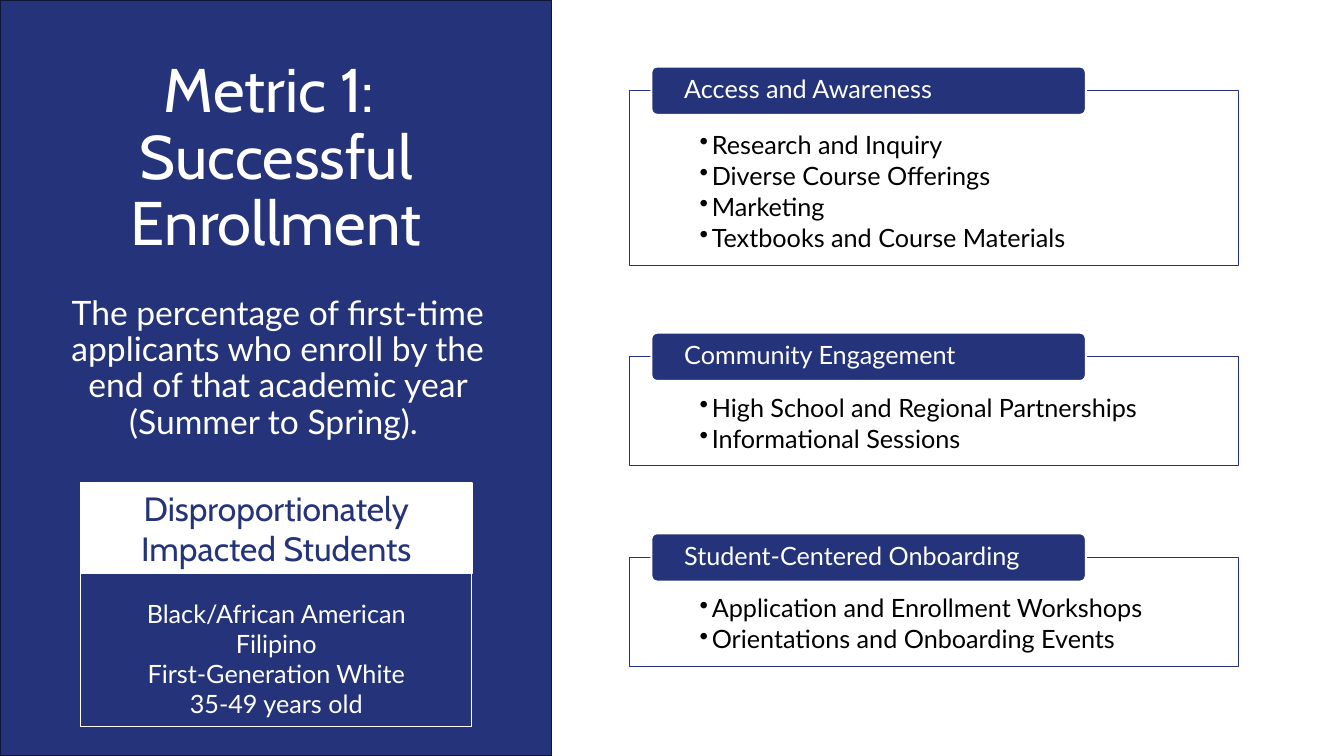
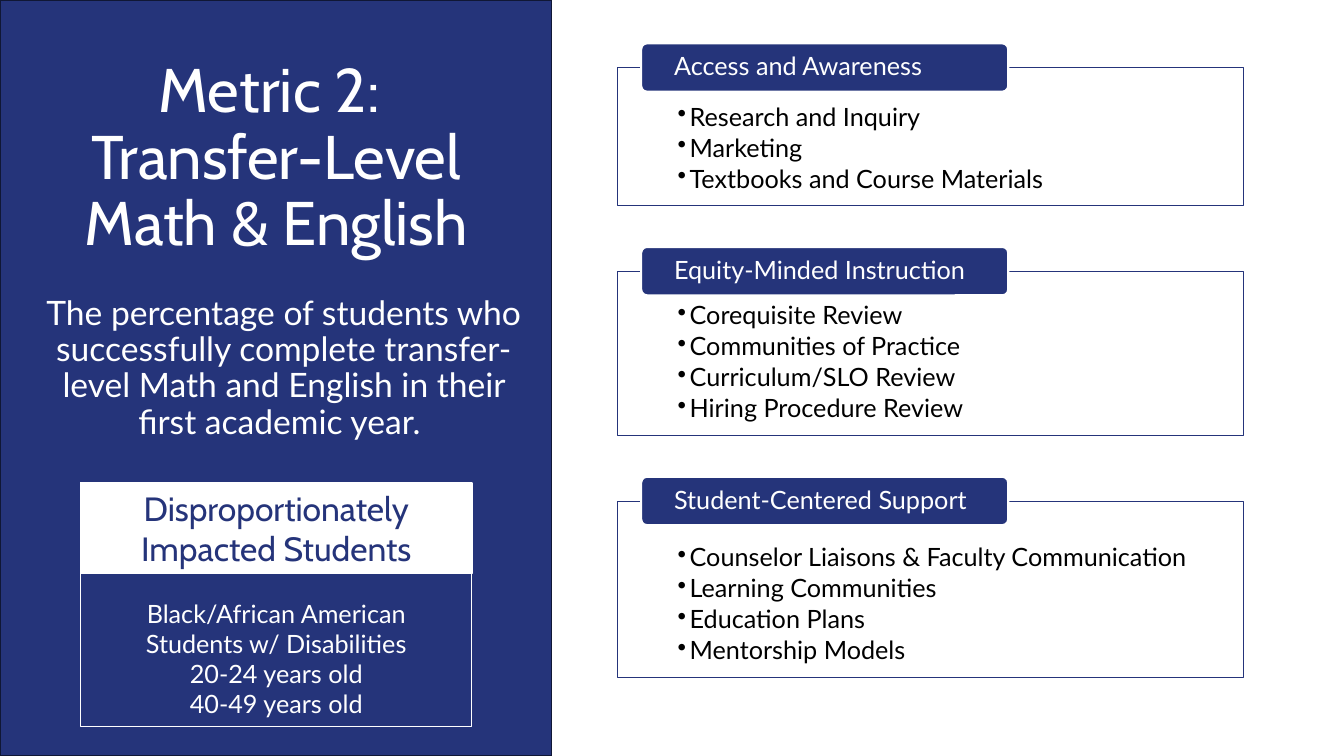
from lxml import etree
from pptx import Presentation
from pptx.dml.color import RGBColor
from pptx.enum.shapes import MSO_SHAPE
from pptx.enum.text import MSO_ANCHOR, MSO_AUTO_SIZE, PP_ALIGN
from pptx.oxml.ns import qn
from pptx.util import Inches, Pt

RECT, ROUNDED = MSO_SHAPE.RECTANGLE, MSO_SHAPE.ROUNDED_RECTANGLE
TOP, MIDDLE, BOTTOM = MSO_ANCHOR.TOP, MSO_ANCHOR.MIDDLE, MSO_ANCHOR.BOTTOM
LEFT, CENTER = PP_ALIGN.LEFT, PP_ALIGN.CENTER
NO_FIT = MSO_AUTO_SIZE.NONE

COLORS = {"navy": "25347A", "edge": "101735", "white": "FFFFFF", "black": "000000"}
HEAD_FONT, BODY_FONT = "Cabin", "Lato"
PANEL_W, SLIDE_W, SLIDE_H = 5.47, 13.33, 7.5
TAB_H = 0.48

# Cards: heading, box height, bullet items
METRICS = [
    {
        "title": "Metric 1: \vSuccessful Enrollment",
        "body": "The percentage of first-time applicants who enroll by the end "
                "of that academic year (Summer to Spring). ",
        "body_box": (0.43, 2.89, 4.65, 1.64),
        "groups": ["Black/African American", "Filipino",
                   "First-Generation White", "35-49 years old"],
        "column": {"left": 6.24, "top": 0.9, "width": 6.04, "gap": 0.91,
                   "tab_dx": 0.22, "tab_w": 4.31, "inset": 0.7},
        "cards": [
            ("Access and Awareness", 1.73,
             ["Research and Inquiry", "Diverse Course Offerings", "Marketing",
              "Textbooks and Course Materials"]),
            ("Community Engagement", 1.08,
             ["High School and Regional Partnerships", "Informational Sessions"]),
            ("Student-Centered Onboarding", 1.08,
             ["Application and Enrollment Workshops",
              "Orientations and Onboarding Events"]),
        ],
    },
    {
        "title": "Metric 2: \vTransfer-Level Math & English",
        "body": "The percentage of students who successfully complete "
                "transfer-level Math and English in their first academic year. ",
        "body_box": (0.36, 2.89, 4.91, 1.64),
        "groups": ["Black/African American", "Students w/ Disabilities",
                   "20-24 years old", "40-49 years old"],
        "column": {"left": 6.12, "top": 0.67, "width": 6.21, "gap": 0.65,
                   "tab_dx": 0.24, "tab_w": 3.64, "inset": 0.6},
        "cards": [
            ("Access and Awareness", 1.37,
             ["Research and Inquiry", "Marketing",
              "Textbooks and Course Materials"]),
            ("Equity-Minded Instruction", 1.63,
             ["Corequisite Review", "Communities of Practice",
              "Curriculum/SLO Review", "Hiring Procedure Review"]),
            ("Student-Centered Support", 1.75,
             ["Counselor Liaisons & Faculty Communication",
              "Learning Communities", "Education Plans", "Mentorship Models"]),
        ],
    },
]


def rgb(name):
    return RGBColor.from_string(COLORS[name])


def add_box(s, kind, box, fill, line, weight):
    sp = s.shapes.add_shape(kind, *map(Inches, box))
    sp.shadow.inherit = False
    if fill:
        sp.fill.solid()
        sp.fill.fore_color.rgb = rgb(fill)
    else:
        sp.fill.background()
    sp.line.color.rgb = rgb(line)
    sp.line.width = Pt(weight)
    return sp


def set_frame(tf, anchor, insets=(0.1, 0.05, 0.1, 0.05)):
    tf.word_wrap = True
    tf.auto_size = NO_FIT
    tf.vertical_anchor = anchor
    tf.margin_left, tf.margin_top, tf.margin_right, tf.margin_bottom = map(Inches, insets)


def style(p, font, size, color, align=LEFT, spacing=1.0, after=0):
    p.alignment = align
    p.line_spacing = spacing
    p.space_before, p.space_after = Pt(0), Pt(after)
    for r in p.runs:
        r.font.name, r.font.size = font, Pt(size)
        r.font.color.rgb = rgb(color)


def set_bullet(p, char=None, indent=0.0):
    """Hang the paragraph on a bullet, or remove the inherited one."""
    pPr = p._p.get_or_add_pPr()
    pPr.set("marL", str(Inches(indent)))
    pPr.set("indent", str(-Inches(indent)))
    bu = etree.SubElement(pPr, qn("a:buChar" if char else "a:buNone"))
    if char:
        bu.set("char", char)


def fill_placeholder(ph, box, text, anchor, font, size):
    ph.left, ph.top, ph.width, ph.height = map(Inches, box)
    tf = ph.text_frame
    tf.text = text
    set_frame(tf, anchor)
    p = tf.paragraphs[0]
    set_bullet(p)
    style(p, font, size, "white", CENTER, 0.9)


def add_impact_box(s, box, groups):
    left, top, width, _ = box
    add_box(s, RECT, (left, top, width, 0.9), "white", "white", 1)
    frame = add_box(s, RECT, box, None, "white", 0.75)
    tf = frame.text_frame
    tf.text = "\n".join(["Disproportionately Impacted Students"] + groups)
    set_frame(tf, TOP)
    heading, *names = tf.paragraphs
    style(heading, HEAD_FONT, 24, "navy", CENTER, after=21)
    for p in names:
        style(p, BODY_FONT, 18, "white", CENTER)


def add_panel(s, metric):
    panel = add_box(s, RECT, (0, 0, PANEL_W, SLIDE_H), "navy", "edge", 1)
    title, body = s.shapes.title, s.placeholders[1]
    title.element.addprevious(panel.element)  # panel lies behind the text
    fill_placeholder(title, (0.43, 0.43, 4.62, 2.19), metric["title"],
                     BOTTOM, HEAD_FONT, 44)
    fill_placeholder(body, metric["body_box"], metric["body"], TOP, BODY_FONT, 24)
    add_impact_box(s, (0.8, 4.79, 3.88, 2.42), metric["groups"])


def add_card(s, box, heading, items, tab_dx, tab_w, inset):
    # Outlined box with bullets
    left, top, _, _ = box
    frame = add_box(s, RECT, box, "white", "navy", 0.5)
    tf = frame.text_frame
    tf.text = "\n".join(items)
    set_frame(tf, BOTTOM, (inset, 0.34, 0, 0.12))
    for p in tf.paragraphs:
        set_bullet(p, "•", 0.12)
        style(p, BODY_FONT, 18, "black", spacing=0.9, after=2.7)

    # Heading tab centred on the top edge
    tab = add_box(s, ROUNDED, (left + tab_dx, top - TAB_H / 2, tab_w, TAB_H),
                  "navy", "white", 1.5)
    tab.adjustments[0] = 0.12
    tf = tab.text_frame
    tf.text = heading
    set_frame(tf, MIDDLE, (0.31, 0, 0.31, 0))
    style(tf.paragraphs[0], BODY_FONT, 18, "white", spacing=0.9)


def add_cards(s, cards, left, top, width, gap, **tab):
    for heading, height, items in cards:
        add_card(s, (left, top, width, height), heading, items, **tab)
        top += height + gap


def add_metric_slide(prs, metric):
    s = prs.slides.add_slide(prs.slide_layouts[1])
    add_panel(s, metric)
    add_cards(s, metric["cards"], **metric["column"])


def main():
    prs = Presentation()
    prs.slide_width, prs.slide_height = Inches(SLIDE_W), Inches(SLIDE_H)
    for metric in METRICS:
        add_metric_slide(prs, metric)
    prs.save("out.pptx")


if __name__ == "__main__":
    main()
